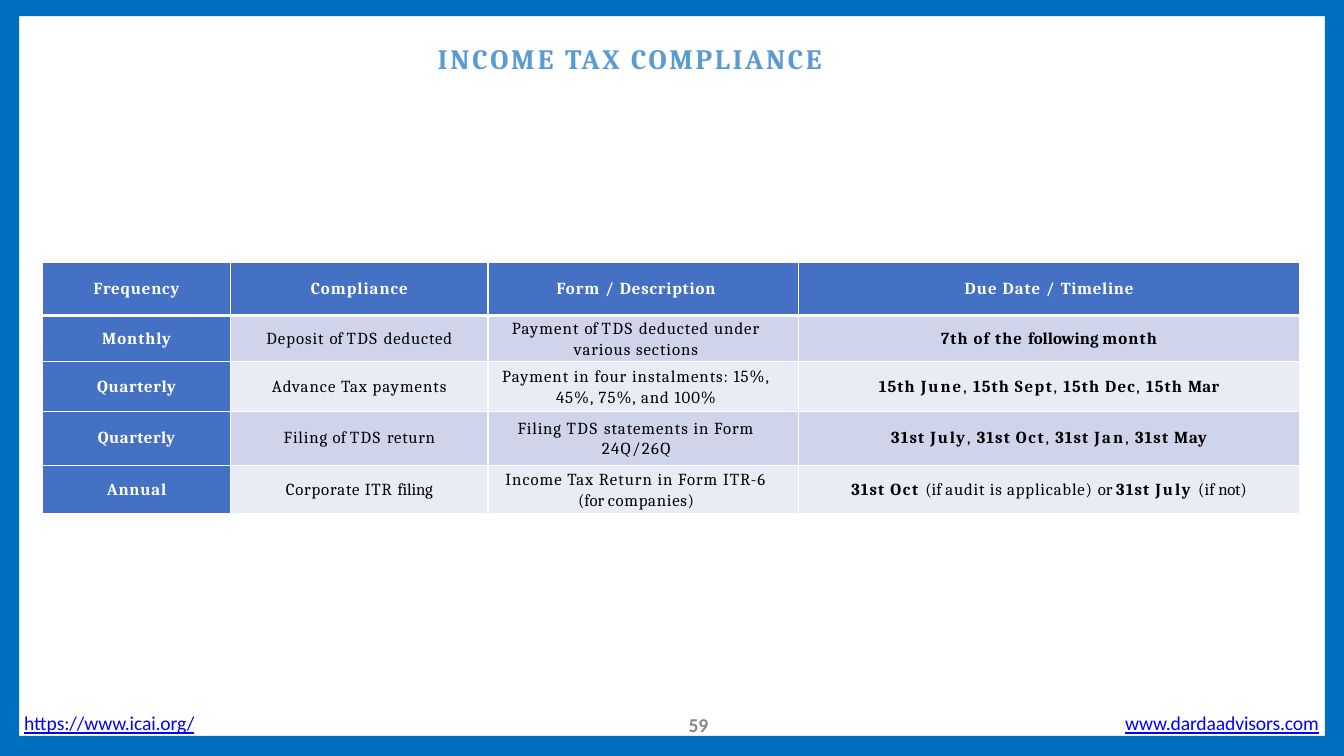
from lxml import etree
from pptx import Presentation
from pptx.dml.color import RGBColor
from pptx.enum.shapes import MSO_SHAPE
from pptx.enum.text import MSO_ANCHOR, PP_ALIGN
from pptx.oxml.ns import qn
from pptx.util import Inches, Pt

RECTANGLE = MSO_SHAPE.RECTANGLE
MIDDLE = MSO_ANCHOR.MIDDLE
CENTER = PP_ALIGN.CENTER

FRAME_BLUE = RGBColor(0x00, 0x6F, 0xC0)
TITLE_BLUE = RGBColor(0x5B, 0x9B, 0xD4)
HEADER_BLUE = RGBColor(0x44, 0x71, 0xC4)
BAND_DARK = RGBColor(0xCF, 0xD4, 0xEA)
BAND_LIGHT = RGBColor(0xE9, 0xEB, 0xF5)
LINK_BLUE = RGBColor(0x00, 0x00, 0xFF)
PAGE_GREY = RGBColor(0x88, 0x88, 0x88)
WHITE = RGBColor(0xFF, 0xFF, 0xFF)
BLACK = RGBColor(0x00, 0x00, 0x00)

COLUMN_WIDTHS = [1.87, 2.55, 3.08, 4.97]
ROW_HEIGHTS = [0.53, 0.46, 0.49, 0.54, 0.48]
DESCRIPTION_COLUMN = 2


def due_dates(day, months):
    """Return bold dates with regular commas between them."""
    spans = []
    for month, spacing in months:
        if spans:
            spans.append((", ", 1.1, False))
        spans += [(f"{day} ", 0.8, True), (month, spacing, True)]
    return spans


TABLE_ROWS = [
    [
        [("Frequency", 0.6, True)],
        [("Compliance", 0.7, True)],
        [("Form / ", 0.8, True), ("Description", 0.6, True)],
        [("Due Date / ", 0.8, True), ("Timeline", 0.5, True)],
    ],
    [
        [("Monthly", 0.7, True)],
        [("Deposit ", 0.7, False), ("of ", 0, False), ("TDS ", 1.1, False), ("deducted", 0.6, False)],
        [("Payment ", 0.8, False), ("of ", 0, False), ("TDS ", 1.1, False),
         ("deducted under various sections", 0.7, False)],
        [("7th of the ", 0.8, True), ("following ", 0, True), ("month", 0.8, True)],
    ],
    [
        [("Quarterly", 0.5, True)],
        [("Advance Tax payments", 0.7, False)],
        [("Payment in four instalments: 15%, 45%, 75%, and 100%", 0.7, False)],
        due_dates("15th", [("June", 1.4), ("Sept", 1.1), ("Dec", 0.9), ("Mar", 0.2)]),
    ],
    [
        [("Quarterly", 0.4, True)],
        [("Filing ", 0.6, False), ("of ", 0, False), ("TDS ", 1.1, False), ("return", 0.5, False)],
        [("Filing ", 0.6, False), ("TDS ", 1.1, False), ("statements in Form ", 0.7, False),
         ("24Q/26Q", 1, False)],
        due_dates("31st", [("July", 1.3), ("Oct", 1.2), ("Jan", 1.5), ("May", 0.5)]),
    ],
    [
        [("Annual", 0.6, True)],
        [("Corporate ITR ", 0.6, False), ("filing", -0.1, False)],
        [("Income Tax Return in Form ITR-6 ", 0.7, False), ("(for ", 0, False),
         ("companies)", 0.5, False)],
        [("31st ", 0.8, True), ("Oct ", 1.2, True), ("(if ", 0, False),
         ("audit is applicable) ", 0.6, False), ("or ", 0, False), ("31st ", 0.8, True),
         ("July ", 1.4, True), ("(if ", 0, False), ("not)", -0.2, False)],
    ],
]


def add_span(para, text, spacing, bold, size, name, color):
    """Add a formatted run with letter spacing in points."""
    span = para.add_run()
    span.text = text
    span.font.size = Pt(size)
    span.font.name = name
    span.font.bold = bold
    span.font.color.rgb = color
    span._r.get_or_add_rPr().set("spc", str(round(spacing * 100)))
    return span


def set_margins(holder, left=0, top=0, right=0, bottom=0):
    """Set the inner margins of a text frame or cell in inches."""
    holder.margin_left = Inches(left)
    holder.margin_top = Inches(top)
    holder.margin_right = Inches(right)
    holder.margin_bottom = Inches(bottom)


def add_box(page, left, top, width, height, indent=0, inset=0):
    """Add a wrapping text box and return its first paragraph."""
    box = page.shapes.add_textbox(Inches(left), Inches(top), Inches(width), Inches(height))
    frame = box.text_frame
    frame.word_wrap = True
    set_margins(frame, left=indent, top=inset)
    return frame.paragraphs[0]


def paint_frame(shape):
    """Give a part of the border its flat blue fill."""
    shape.shadow.inherit = False
    shape.fill.solid()
    shape.fill.fore_color.rgb = FRAME_BLUE
    shape.line.fill.background()


def add_frame(page):
    """Draw the blue border around the page."""
    paint_frame(page.shapes.add_shape(RECTANGLE, Inches(13.14), 0, Inches(0.19), Inches(7.5)))
    corners = [(0, 7.5), (13.24, 7.5), (13.24, 7.3), (0.19, 7.3),
               (0.19, 0.16), (13.31, 0.16), (13.31, 0)]
    outline = page.shapes.build_freeform(0, 0)
    outline.add_line_segments([(Inches(x), Inches(y)) for x, y in corners])
    paint_frame(outline.convert_to_shape())


def add_title(page):
    """Write the page heading."""
    para = add_box(page, 1.43, 0.25, 9.98, 0.76, indent=2.91, inset=0.16)
    for text, spacing in [("INCOME", 2), (" TAX ", 1.9), ("COMPLIANCE", 1.8)]:
        add_span(para, text, spacing, True, 20, "Cambria", TITLE_BLUE)


def add_footer(page, left, top, width, indent, text, color, spacing, is_link):
    """Write one footer item."""
    para = add_box(page, left, top, width, 0.22, indent=indent)
    para.line_spacing = Pt(14.3)
    span = add_span(para, text, spacing, not is_link, 14, "Calibri", color)
    span.font.underline = is_link


def add_border(cell, side, width):
    """Draw one white cell border."""
    line = etree.SubElement(cell._tc.get_or_add_tcPr(), qn(f"a:ln{side}"), w=str(Pt(width)))
    fill = etree.SubElement(line, qn("a:solidFill"))
    etree.SubElement(fill, qn("a:srgbClr"), val=str(WHITE))


def fill_cell(cell, spans, row, column):
    """Write and style one table cell."""
    is_heading = row == 0 or column == 0
    cell.vertical_anchor = MIDDLE
    set_margins(cell)
    para = cell.text_frame.paragraphs[0]
    para.alignment = CENTER
    if column == DESCRIPTION_COLUMN:
        set_margins(cell, left=0.06, right=0.2)
        para.line_spacing = 1.07
    for text, spacing, bold in spans:
        add_span(para, text, spacing, bold, 12, "Cambria", WHITE if is_heading else BLACK)
    for side in "LRTB":
        under_header = (row, side) in [(0, "B"), (1, "T")]
        add_border(cell, side, 3 if under_header else 1)
    cell.fill.solid()
    band = BAND_DARK if row % 2 else BAND_LIGHT
    cell.fill.fore_color.rgb = HEADER_BLUE if is_heading else band


def add_compliance_table(page):
    """Build the table of tax filings and due dates."""
    table = page.shapes.add_table(
        len(ROW_HEIGHTS), len(COLUMN_WIDTHS), Inches(0.42), Inches(2.6),
        Inches(sum(COLUMN_WIDTHS)), Inches(sum(ROW_HEIGHTS))).table
    for column, width in zip(table.columns, COLUMN_WIDTHS):
        column.width = Inches(width)
    for row, height in zip(table.rows, ROW_HEIGHTS):
        row.height = Inches(height)
    for row, cells in enumerate(TABLE_ROWS):
        for column, spans in enumerate(cells):
            fill_cell(table.cell(row, column), spans, row, column)


def main():
    """Build and save the deck."""
    deck = Presentation()
    deck.slide_width = Inches(13.33)
    deck.slide_height = Inches(7.5)
    page = deck.slides.add_slide(deck.slide_layouts[6])
    add_frame(page)
    add_title(page)
    add_footer(page, 0.23, 7.09, 1.75, 0.01, "https://www.icai.org/", LINK_BLUE, -0.1, True)
    add_footer(page, 11.15, 7.09, 1.98, 0.01, "www.dardaadvisors.com", LINK_BLUE, -0.1, True)
    add_footer(page, 6.62, 7.11, 0.47, 0.21, "59", PAGE_GREY, -0.2, False)
    add_compliance_table(page)
    deck.save("out.pptx")


if __name__ == "__main__":
    main()
